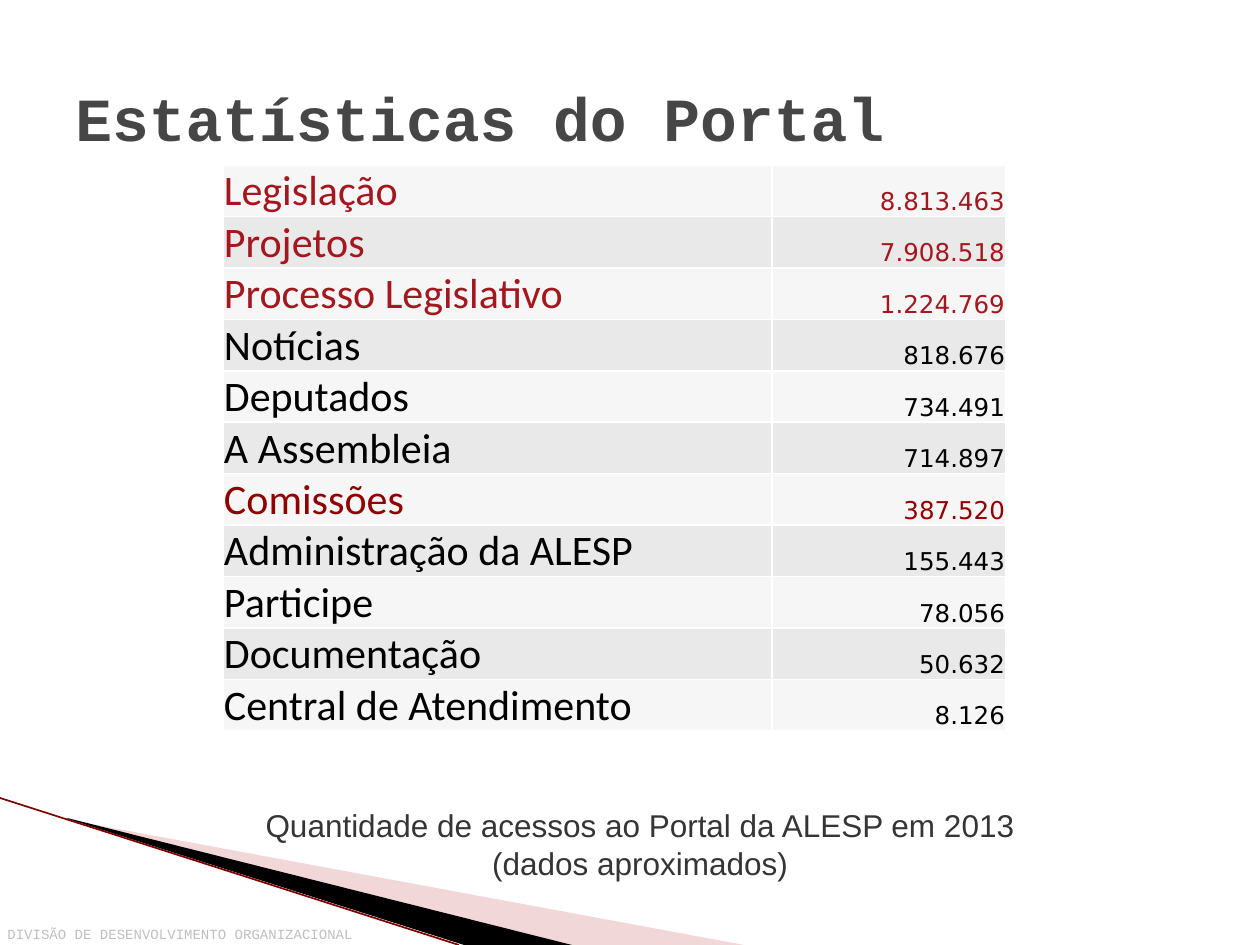
"""Build the portal statistics slide with its ranked table of visits."""
from dataclasses import dataclass
from typing import Optional

from lxml.etree import SubElement as Sub
from pptx import Presentation
from pptx.dml.color import RGBColor as Rgb
from pptx.enum.shapes import MSO_CONNECTOR as Conn
from pptx.enum.text import MSO_ANCHOR as Anchor, PP_ALIGN as Align
from pptx.oxml.ns import qn
from pptx.util import Emu, Pt

SCALE = 914400 / 126


@dataclass(frozen=True)
class Theme:
    title: str = "464646"
    body: str = "353535"
    foot: str = "BFBFBF"
    red: str = "A3171E"
    dark: str = "900000"
    black: str = "000000"
    pink: str = "DD9D9D"
    edge: str = "800000"
    bands: tuple = ("F6F6F6", "E9E9E9")
    mono: str = "Courier New"
    sans: str = "Arial"
    name: str = "Calibri"
    count: str = "DejaVu Sans"
    title_pt: int = 35
    body_pt: int = 18
    foot_pt: int = 8
    name_pt: int = 24
    count_pt: int = 14


T = Theme()


@dataclass(frozen=True)
class Style:
    face: str
    size: int
    color: str
    bold: bool = False
    align: Align = Align.LEFT


@dataclass(frozen=True)
class Label:
    text: str
    box: tuple
    style: Style
    wrap: bool = True
    anchor: Anchor = Anchor.TOP


@dataclass(frozen=True)
class Wedge:
    points: tuple
    color: str
    alpha: Optional[int] = None


@dataclass(frozen=True)
class Row:
    name: str
    count: str
    color: str = T.black


WEDGES = (
    Wedge(((69, 820), (744, 945), (572, 945), (69, 819)), T.pink, 40),
    Wedge(((67, 818), (572, 945), (464, 945), (68, 819)), T.black),
)
LABELS = (
    Label("DIVISÃO DE DESENVOLVIMENTO ORGANIZACIONAL", (-5, 919, 373, 30),
          Style(T.mono, T.foot_pt, T.foot), wrap=False),
    Label("Estatísticas do Portal", (63, 38, 1134, 158),
          Style(T.mono, T.title_pt, T.title, bold=True), anchor=Anchor.MIDDLE),
    Label("Quantidade de acessos ao Portal da ALESP em 2013 (dados aproximados)",
          (233, 800, 814, 89),
          Style(T.sans, T.body_pt, T.body, align=Align.CENTER)),
)
ROWS = (
    Row("Legislação", "8.813.463", T.red),
    Row("Projetos", "7.908.518", T.red),
    Row("Processo Legislativo", "1.224.769", T.red),
    Row("Notícias", "818.676"),
    Row("Deputados", "734.491"),
    Row("A Assembleia", "714.897"),
    Row("Comissões", "387.520", T.dark),
    Row("Administração da ALESP", "155.443"),
    Row("Participe", "78.056"),
    Row("Documentação", "50.632"),
    Row("Central de Atendimento", "8.126"),
)
COLS = (549, 234)
HIGH = 51


def px(num: int) -> Emu:
    return Emu(round(num * SCALE))


def paint(fill, color: str) -> None:
    fill.solid()
    fill.fore_color.rgb = Rgb.from_string(color)


def write(frame, text: str, style: Style) -> None:
    frame.text = text
    para = frame.paragraphs[0]
    para.alignment = style.align
    font = para.font
    font.name, font.size, font.bold = style.face, Pt(style.size), style.bold
    font.color.rgb = Rgb.from_string(style.color)


def add_label(slide, label: Label) -> None:
    frame = slide.shapes.add_textbox(*map(px, label.box)).text_frame
    frame.word_wrap = label.wrap
    frame.vertical_anchor = label.anchor
    write(frame, label.text, label.style)


def add_wedge(slide, wedge: Wedge) -> None:
    first, *rest = wedge.points
    pen = slide.shapes.build_freeform(*first, scale=SCALE)
    pen.add_line_segments(rest, close=True)
    shape = pen.convert_to_shape()
    shape.shadow.inherit = False
    paint(shape.fill, wedge.color)
    shape.line.fill.background()
    if wedge.alpha is not None:
        tint = shape.fill._xPr.find(qn("a:solidFill"))[0]
        Sub(tint, qn("a:alpha")).set("val", str(wedge.alpha * 1000))


def add_edge(slide) -> None:
    line = slide.shapes.add_connector(
        Conn.STRAIGHT, px(0), px(798), px(459), px(945))
    line.line.width = Pt(0.95)
    line.line.color.rgb = Rgb.from_string(T.edge)
    Sub(line._element.spPr, qn("a:effectLst"))


def add_grid(slide) -> None:
    grid = slide.shapes.add_table(
        len(ROWS), len(COLS), px(223), px(165),
        px(sum(COLS)), px(HIGH * len(ROWS))).table
    grid.first_row = grid.horz_banding = False
    for col, wide in zip(grid.columns, COLS):
        col.width = px(wide)
    for num, row in enumerate(ROWS):
        grid.rows[num].height = px(HIGH)
        pairs = (
            (row.name, Style(T.name, T.name_pt, row.color)),
            (row.count, Style(T.count, T.count_pt, row.color,
                              align=Align.RIGHT)),
        )
        for cell, (text, style) in zip(grid.rows[num].cells, pairs):
            paint(cell.fill, T.bands[num % 2])
            cell.margin_left = cell.margin_right = cell.margin_top = px(1)
            cell.margin_bottom = 0
            cell.vertical_anchor = Anchor.BOTTOM
            write(cell.text_frame, text, style)


def main() -> None:
    deck = Presentation()
    deck.slide_width, deck.slide_height = px(1260), px(945)
    slide = deck.slides.add_slide(deck.slide_layouts[6])
    for wedge in WEDGES:
        add_wedge(slide, wedge)
    add_edge(slide)
    for label in LABELS:
        add_label(slide, label)
    add_grid(slide)
    deck.save("out.pptx")


if __name__ == "__main__":
    main()
